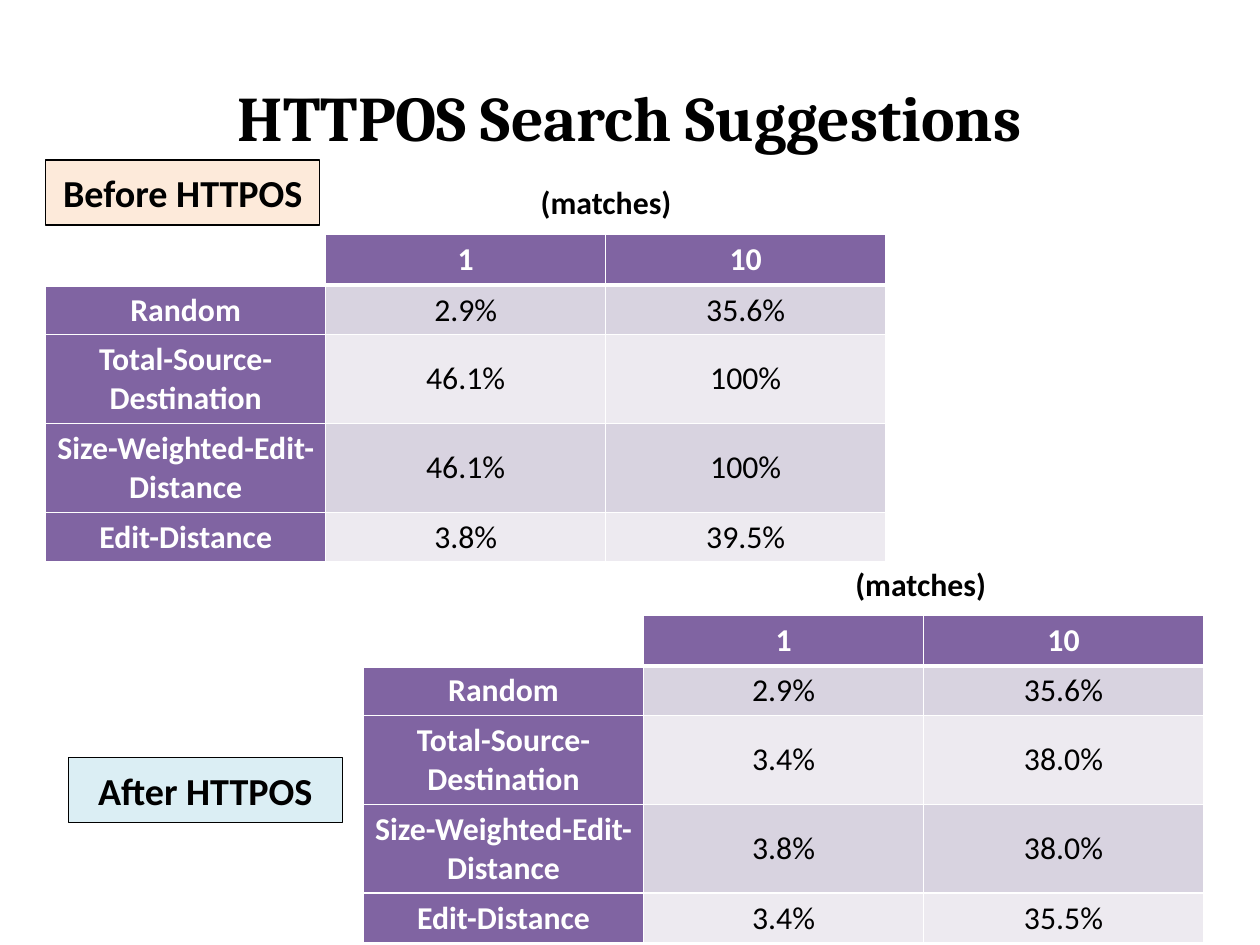
from lxml.etree import SubElement
from pptx import Presentation
from pptx.dml.color import RGBColor
from pptx.enum.shapes import MSO_SHAPE
from pptx.enum.text import MSO_ANCHOR, PP_ALIGN
from pptx.oxml.ns import qn
from pptx.util import Pt

COLORS = {
    "black": "000000", "white": "FFFFFF", "head": "8064A2",
    "dark": "D8D3E0", "light": "EDEAF0", "peach": "FDEADA", "aqua": "DBEEF4",
}
NAMES = ["Random", "Total-Source-Destination",
         "Size-Weighted-Edit-Distance", "Edit-Distance"]
BEFORE = [("2.9%", "35.6%"), ("46.1%", "100%"), ("46.1%", "100%"), ("3.8%", "39.5%")]
AFTER = [("2.9%", "35.6%"), ("3.4%", "38.0%"), ("3.8%", "38.0%"), ("3.4%", "35.5%")]
COL = 176.4
ROWS = [32, 31, 56, 56, 31]


def color(name):
    """Return the named colour."""
    return RGBColor.from_string(COLORS[name])


def style(frame, text, size, ink="black", bold=True, font="Calibri"):
    """Write one centred paragraph and format its run."""
    frame.text = text
    para = frame.paragraphs[0]
    para.alignment = PP_ALIGN.CENTER
    for run in para.runs:
        run.font.name = font
        run.font.size = Pt(size)
        run.font.bold = bold
        run.font.color.rgb = color(ink)


def add_text(slide, box, text, size, font="Calibri"):
    """Place a text box centred on its middle line."""
    frame = slide.shapes.add_textbox(*map(Pt, box)).text_frame
    frame.word_wrap = True
    frame.margin_left = frame.margin_right = 0
    frame.margin_top = frame.margin_bottom = 0
    frame.vertical_anchor = MSO_ANCHOR.MIDDLE
    style(frame, text, size, font=font)


def add_label(slide, left, top, text, fill):
    """Place a framed label."""
    shape = slide.shapes.add_shape(
        MSO_SHAPE.RECTANGLE, Pt(left), Pt(top), Pt(172.8), Pt(41))
    shape.shadow.inherit = False
    shape.fill.solid()
    shape.fill.fore_color.rgb = color(fill)
    shape.line.color.rgb = color("black")
    shape.line.width = Pt(0.71)
    shape.text_frame.word_wrap = True
    shape.text_frame.vertical_anchor = MSO_ANCHOR.MIDDLE
    style(shape.text_frame, text, 24)


def add_edges(cell, row):
    """Draw white cell borders, thick between header and body."""
    props = cell._tc.get_or_add_tcPr()
    for spot, side in enumerate(("lnL", "lnR", "lnT", "lnB")):
        thick = (row, side) in ((0, "lnB"), (1, "lnT"))
        edge = SubElement(props, qn("a:" + side), w=str(Pt(3 if thick else 1)))
        fill = SubElement(edge, qn("a:solidFill"))
        SubElement(fill, qn("a:srgbClr"), val=COLORS["white"])
        props.insert(spot, edge)


def add_scores(slide, left, top, scores, shift, rise):
    """Place a table of match rates with its caption above."""
    data = [("", "1", "10")] + [(n, *s) for n, s in zip(NAMES, scores)]
    table = slide.shapes.add_table(
        len(data), 3, Pt(left), Pt(top), Pt(3 * COL), Pt(sum(ROWS))).table
    table.horz_banding = False
    table.first_row = False
    for col in table.columns:
        col.width = Pt(COL)
    for r, line in enumerate(data):
        table.rows[r].height = Pt(ROWS[r])
        for c, text in enumerate(line):
            cell = table.cell(r, c)
            cell.vertical_anchor = MSO_ANCHOR.MIDDLE
            head = r == 0 or c == 0
            if text:
                cell.fill.solid()
                band = "dark" if r % 2 else "light"
                cell.fill.fore_color.rgb = color("head" if head else band)
                style(cell.text_frame, text, 20, "white" if head else "black", head)
            else:
                cell.fill.background()
            add_edges(cell, r)
    add_text(slide, (left + shift, top - rise, 126, 31), "(matches)", 20)


def main():
    """Build the slide and save it."""
    deck = Presentation()
    deck.slide_width, deck.slide_height = Pt(793.75), Pt(595.25)
    slide = deck.slides.add_slide(deck.slide_layouts[6])
    add_text(slide, (39.6, 23.5, 714.2, 99.4), "HTTPOS Search Suggestions", 40, "Cambria")
    add_label(slide, 28.8, 100.8, "Before HTTPOS", "peach")
    add_label(slide, 43, 477.4, "After HTTPOS", "aqua")
    add_scores(slide, 28.8, 147.6, BEFORE, 290, 36)
    add_scores(slide, 229, 387.4, AFTER, 288, 35)
    deck.save("out.pptx")


if __name__ == "__main__":
    main()
